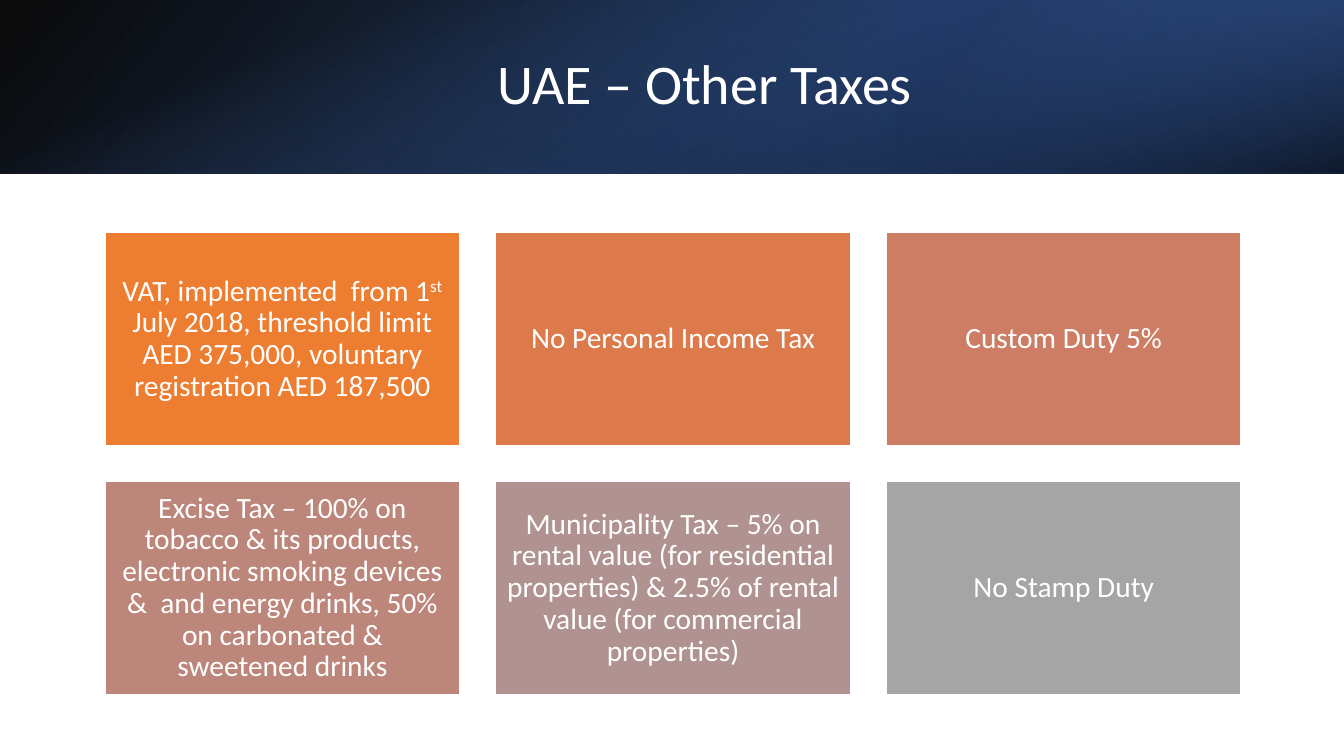
import pptx
import pptx.dml.color
import pptx.enum.shapes
import pptx.enum.text
import pptx.oxml
import pptx.oxml.ns
import pptx.util
from pptx.util import Inches

COLORS = {
    "white": "FFFFFF", "black": "000000", "navy": "203864",
    "deep_blue": "2F5597", "blue": "4472C4",
    "vat": "ED7D31", "income": "DC7A4B", "customs": "CC7D64",
    "excise": "BD867B", "municipality": "B09391", "stamp": "A5A5A5",
}
FONT = "Calibri"
TAXES = [
    ("vat", [("VAT, implemented  from 1", False), ("st", True),
             (" July 2018, threshold limit AED 375,000, voluntary registration AED 187,500", False)]),
    ("income", [("No Personal Income Tax", False)]),
    ("customs", [("Custom Duty 5%", False)]),
    ("excise", [("Excise Tax – 100% on tobacco & its products, electronic smoking devices "
                 "&  and energy drinks, 50% on carbonated & sweetened drinks", False)]),
    ("municipality", [("Municipality Tax – 5% on rental value (for residential properties) "
                       "& 2.5% of rental value (for commercial properties)", False)]),
    ("stamp", [("No Stamp Duty", False)]),
]


def rgb(name):
    return pptx.dml.color.RGBColor.from_string(COLORS[name])


def write_text(shape, runs, size, color="white", inset=None):
    frame = shape.text_frame
    frame.word_wrap = True
    frame.auto_size = pptx.enum.text.MSO_AUTO_SIZE.NONE
    frame.vertical_anchor = pptx.enum.text.MSO_ANCHOR.MIDDLE
    if inset is not None:
        frame.margin_left = frame.margin_right = Inches(inset)
        frame.margin_top = frame.margin_bottom = Inches(inset)
    paragraph = frame.paragraphs[0]
    paragraph.alignment = pptx.enum.text.PP_ALIGN.CENTER
    paragraph.line_spacing = 0.9
    for words, raised in runs:
        run = paragraph.add_run()
        run.text = words
        run.font.name = FONT
        run.font.size = pptx.util.Pt(size)
        run.font.color.rgb = rgb(color)
        if raised:
            run.font._element.set("baseline", "30000")


def add_rectangle(slide, left, top, width, height):
    rectangle = slide.shapes.add_shape(
        pptx.enum.shapes.MSO_SHAPE.RECTANGLE,
        Inches(left), Inches(top), Inches(width), Inches(height))
    rectangle.shadow.inherit = False
    return rectangle


def add_gradient_band(slide, box, stops, angle, rotation=0, flipped=False):
    band = add_rectangle(slide, *box)
    band.rotation = rotation
    band.line.fill.background()
    properties = band._element.spPr
    if flipped:
        properties.find(pptx.oxml.ns.qn("a:xfrm")).set("flipH", "1")
    stop_xml = "".join(
        f'<a:gs pos="{position * 1000}"><a:srgbClr val="{COLORS[color]}">'
        f'<a:alpha val="{opacity * 1000}"/></a:srgbClr></a:gs>'
        for position, color, opacity in stops)
    gradient = pptx.oxml.parse_xml(
        f'<a:gradFill {pptx.oxml.ns.nsdecls("a")} rotWithShape="1"><a:gsLst>{stop_xml}</a:gsLst>'
        f'<a:lin ang="{angle * 60000}" scaled="0"/></a:gradFill>')
    properties.find(pptx.oxml.ns.qn("a:prstGeom")).addnext(gradient)


def build_header(slide, left, top, width, height):
    add_gradient_band(slide, (left, top, width, height),
                      [(0, "black", 96), (100, "deep_blue", 100)], 140, flipped=True)
    add_gradient_band(slide, (left + width * 2 / 3, top, width / 3, height),
                      [(19, "navy", 68), (100, "blue", 79)], 320, rotation=180, flipped=True)
    offset = (width - height) / 2
    add_gradient_band(slide, (left + offset, top - offset, height, width),
                      [(23, "blue", 0), (99, "black", 74)], 340, rotation=90)
    title = slide.shapes.title
    title.left, title.top = Inches(left + 1.5), Inches(top + 0.38)
    title.width, title.height = Inches(10.98), Inches(0.96)
    write_text(title, [("UAE – Other Taxes", False)], 40)
    slide.shapes._spTree.append(title._element)


def build_tax_grid(slide, left, top, width, height, columns=3, rows=2, gap=0.355):
    card_width = (width - gap * (columns - 1)) / columns
    card_height = (height - gap * (rows - 1)) / rows
    for index, (color, runs) in enumerate(TAXES):
        row, column = divmod(index, columns)
        card = add_rectangle(slide, left + column * (card_width + gap),
                             top + row * (card_height + gap), card_width, card_height)
        card.fill.solid()
        card.fill.fore_color.rgb = rgb(color)
        card.line.color.rgb = rgb("white")
        card.line.width = pptx.util.Pt(1)
        write_text(card, runs, 21, inset=0.09)


def main():
    deck = pptx.Presentation()
    deck.slide_width, deck.slide_height = Inches(13.33), Inches(7.5)
    slide = deck.slides.add_slide(deck.slide_layouts[5])
    build_header(slide, 0, 0, 13.33, 1.72)
    build_tax_grid(slide, 1.04, 2.31, 11.27, 4.58)
    deck.save("out.pptx")


if __name__ == "__main__":
    main()
